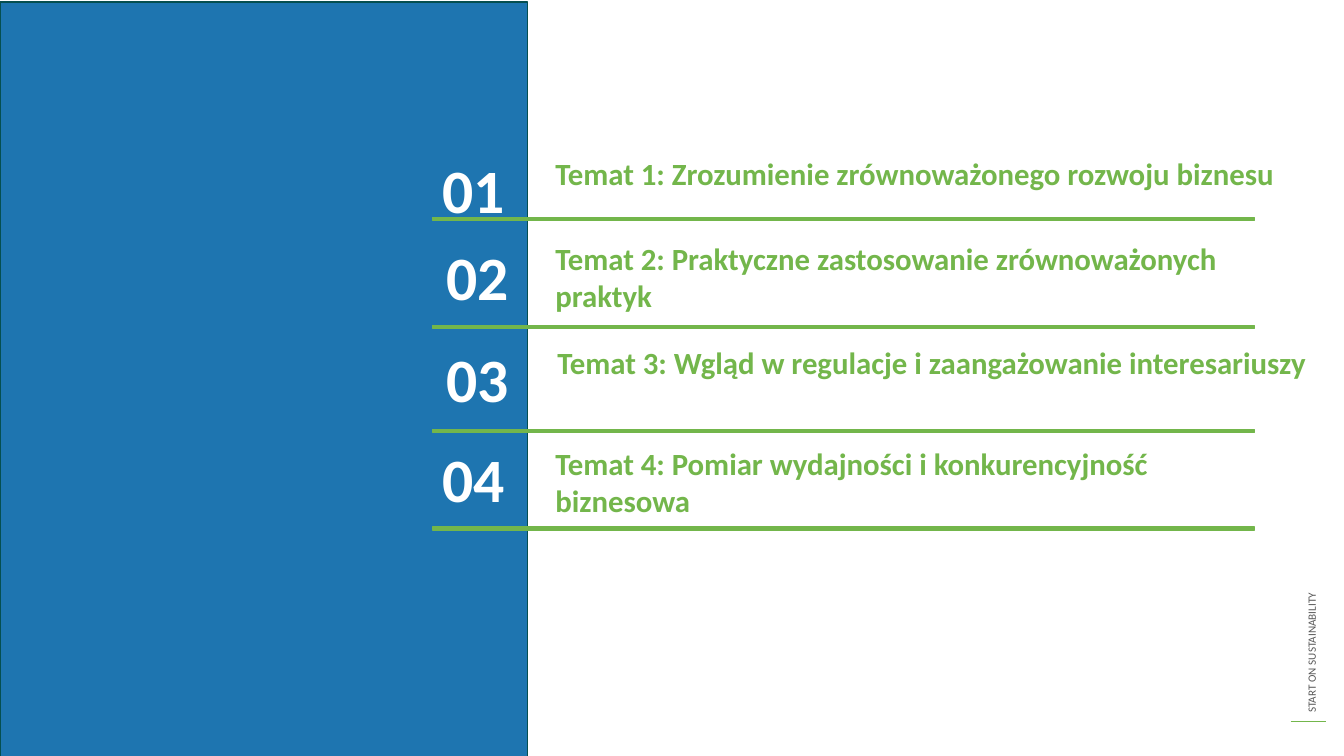
from lxml import etree
from pptx import Presentation
from pptx import util as u
from pptx.dml.color import RGBColor
from pptx.enum import shapes, text
from pptx.oxml.ns import qn

PX = 9144  # 100 px to the inch
GREEN, BLUE, DARK, WHITE, GREY = "73B64B", "1E75B0", "054F50", "FFFFFF", "595959"

deck = Presentation()
deck.slide_width, deck.slide_height = 1333 * PX, 750 * PX
slide = deck.slides.add_slide(deck.slide_layouts[6])


def write(words, box, size, color, bold=True, spacing=None):
    label = slide.shapes.add_textbox(*(n * PX for n in box))
    frame = label.text_frame
    frame.word_wrap = True
    frame.vertical_anchor = text.MSO_ANCHOR.TOP
    par = frame.paragraphs[0]
    par.line_spacing = spacing
    run = par.add_run()
    run.text = words
    for key, value in dict(name="Calibri", size=u.Pt(size), bold=bold).items():
        setattr(run.font, key, value)
    run.font.color.rgb = RGBColor.from_string(color)
    return label


def block(box, fill, edge):
    rect = slide.shapes.add_shape(shapes.MSO_SHAPE.RECTANGLE, *(n * PX for n in box))
    rect.shadow.inherit = False
    rect.fill.solid()
    rect.fill.fore_color.rgb = RGBColor.from_string(fill)
    rect.line.color.rgb = RGBColor.from_string(edge)
    rect.line.width = u.Pt(1)


# Side label and its rule
side = write("START ON SUSTAINABILITY", (1078, 482, 446, 24), 8, GREY, bold=False)
side.rotation = 270
rule = slide.shapes.add_connector(
    shapes.MSO_CONNECTOR.STRAIGHT, *(n * PX for n in (1280, 716, 1315, 716)))
rule.line.color.rgb = RGBColor.from_string(GREEN)
rule.line.width = u.Pt(1)
etree.SubElement(rule._element.spPr, qn("a:effectLst"))

# Blue panel
block((0, 2, 523, 750), BLUE, DARK)

# Topics: words, topic box, number corner, bar top
topics = [
    ("Zrozumienie zrównoważonego rozwoju biznesu", (541, 149, 753, 37), (429, 124), 216),
    ("Praktyczne zastosowanie zrównoważonych praktyk", (541, 233, 753, 73), (433, 210), 323),
    ("Wgląd w regulacje i zaangażowanie interesariuszy", (543, 336, 764, 45), (433, 311), 426),
    ("Pomiar wydajności i konkurencyjność biznesowa", (541, 436, 718, 37), (429, 411), 523),
]
for num, (words, box, corner, bar) in enumerate(topics, 1):
    write(f"Temat {num}: {words}", box, 22, GREEN)
    write(f"{num:02}", (*corner, 135, 105), 44, WHITE, spacing=1.3)
    block((429, bar, 815, 3), GREEN, GREEN)

deck.save("out.pptx")
